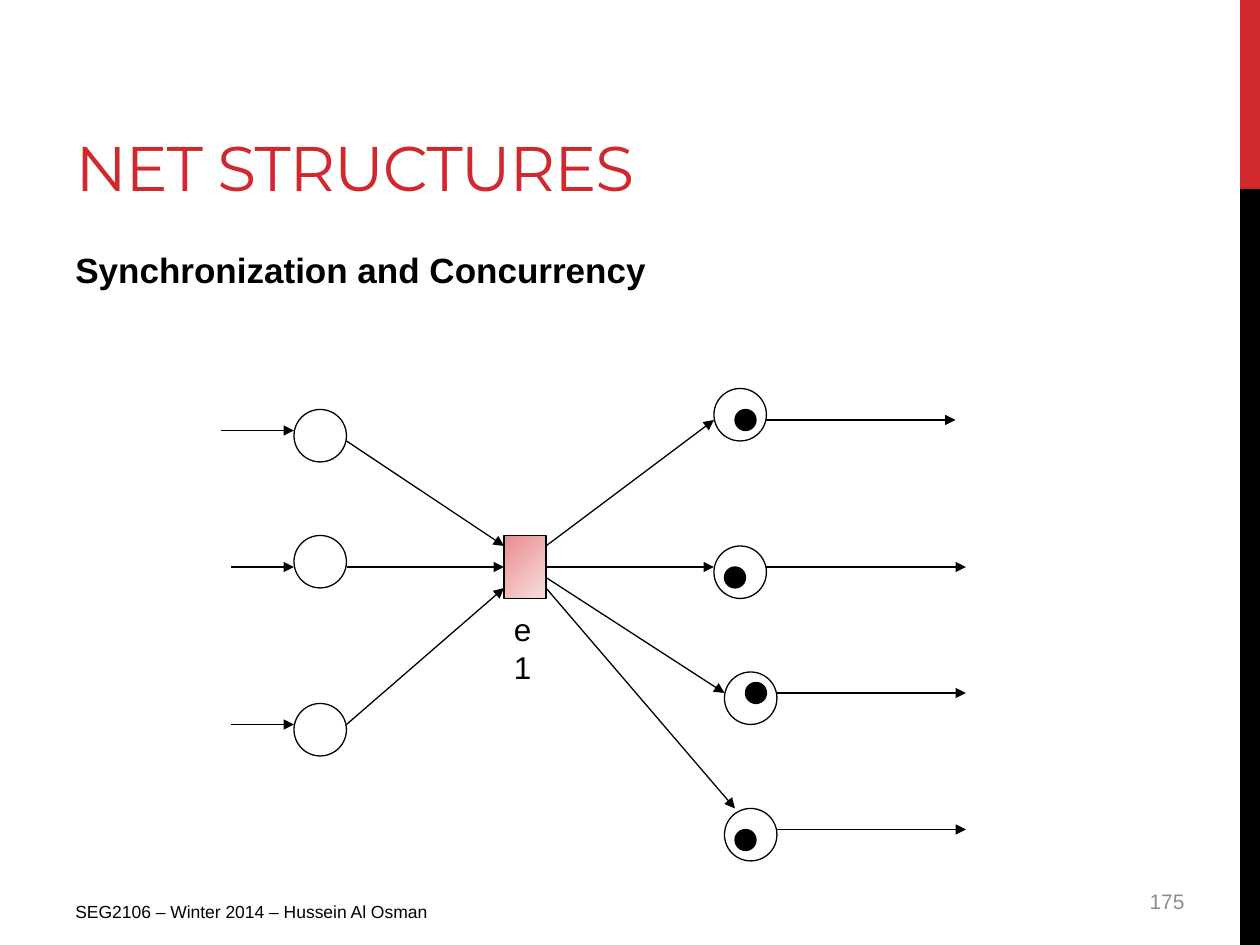
"""Builds a Petri net slide on synchronization and concurrency."""
from lxml import etree
from pptx import Presentation
from pptx.dml.color import RGBColor
from pptx.enum.shapes import MSO_CONNECTOR, MSO_SHAPE
from pptx.enum.text import MSO_ANCHOR, MSO_AUTO_SIZE, PP_ALIGN
from pptx.oxml.ns import qn
from pptx.util import Cm, Pt

RECT, OVAL = MSO_SHAPE.RECTANGLE, MSO_SHAPE.OVAL
STRAIGHT = MSO_CONNECTOR.STRAIGHT
TOP, MIDDLE, BOTTOM = MSO_ANCHOR.TOP, MSO_ANCHOR.MIDDLE, MSO_ANCHOR.BOTTOM
LEFT, RIGHT = PP_ALIGN.LEFT, PP_ALIGN.RIGHT
RED, BLACK = "D1282E", "000000"
LEFT_SITE, RIGHT_SITE = 1, 3

TITLE = "NET STRUCTURES"
TEXTS = [
    ("Synchronization and Concurrency", (1.27, 4.88, 21.16, 1.2), dict(size=20, bold=True)),
    ("e1", (10.11, 12.17, 1.12, 1.9), dict(size=18)),
    ("175", (18.21, 17.65, 5.92, 1.02),
     dict(size=12, color="8C8C8C", align=RIGHT, anchor=MIDDLE)),
    ("SEG2106 – Winter 2014 – Hussein Al Osman", (1.27, 18.03, 9.53, 0.79), dict(size=10)),
]
SIDE_BARS = [(0, 3.81, RED), (3.81, 15.24, BLACK)]

GRID = 2.54 / 12
PLACE_SIZE, TOKEN_SIZE = 5, 2
EVENT = dict(left=48, top=51, width=4, height=6)
INPUT_LEFT = 28
INPUTS = [
    dict(top=39, entry=(21, 41), leave_y=42, event_y=52),
    dict(top=51, entry=(22, 54), leave_y=54, event_y=54),
    dict(top=67, entry=(22, 69), leave_y=69, event_y=56),
]
OUTPUTS = [
    dict(place=(68, 37), token=(70, 39), event_y=52, arrive=(68, 40), leave=(91, 40)),
    dict(place=(68, 52), token=(69, 54), event_y=54, arrive=(68, 54), leave=(92, 54)),
    dict(place=(69, 64), token=(71, 65), event_y=55, arrive=(69, 66), leave=(92, 66)),
    dict(place=(69, 77), token=(70, 79), event_y=56, arrive=(70, 77), leave=(92, 79)),
]


def rgb(color):
    """Return the colour of a hex string."""
    return RGBColor.from_string(color)


def grid(*units):
    """Turn grid units into lengths."""
    return [Cm(unit * GRID) for unit in units]


def write(box, text, size, color=BLACK, font="Arial", bold=False,
          align=LEFT, anchor=TOP, spacing=None):
    """Put one formatted paragraph into a shape."""
    frame = box.text_frame
    frame.word_wrap = True
    frame.auto_size = MSO_AUTO_SIZE.NONE
    frame.vertical_anchor = anchor
    para = frame.paragraphs[0]
    para.alignment = align
    para.space_before = Pt(0)
    span = para.add_run()
    span.text = text
    span.font.size = Pt(size)
    span.font.name = font
    span.font.bold = bold
    span.font.color.rgb = rgb(color)
    if spacing is not None:
        span.font._element.set("spc", str(spacing))


def add_shape(page, kind, bounds, fill=None, line=None):
    """Add a preset shape with an optional fill and outline."""
    shape = page.shapes.add_shape(kind, *bounds)
    shape.shadow.inherit = False
    if fill:
        shape.fill.solid()
        shape.fill.fore_color.rgb = rgb(fill)
    else:
        shape.fill.background()
    if line:
        shape.line.color.rgb = rgb(line)
        shape.line.width = Pt(0.75)
    else:
        shape.line.fill.background()
    return shape


def add_arrow(page, start, end):
    """Add a thin black arrow between two grid points."""
    arrow = page.shapes.add_connector(STRAIGHT, *grid(*start, *end))
    arrow.line.color.rgb = rgb(BLACK)
    arrow.line.width = Pt(0.75)
    etree.SubElement(arrow.line._get_or_add_ln(), qn("a:tailEnd"), type="triangle")
    etree.SubElement(arrow._element.spPr, qn("a:effectLst"))
    return arrow


def add_event(page):
    """Add the shaded event box."""
    event = add_shape(page, RECT, grid(*EVENT.values()), line=BLACK)
    event.fill.gradient()
    event.fill.gradient_angle = 315
    for stop, color in zip(event.fill.gradient_stops, ("EA8C8C", "F7DEDE")):
        stop.color.rgb = rgb(color)
    return event


def add_place(page, left, top):
    """Add an empty place circle."""
    add_shape(page, OVAL, grid(left, top, PLACE_SIZE, PLACE_SIZE), line=BLACK)


def add_net(page):
    """Draw the event with its input and output places."""
    event = add_event(page)
    event_right = EVENT["left"] + EVENT["width"]
    event_middle = EVENT["top"] + EVENT["height"] / 2
    for item in INPUTS:
        add_place(page, INPUT_LEFT, item["top"])
        add_arrow(page, item["entry"], (INPUT_LEFT, item["entry"][1]))
        arrow = add_arrow(page, (INPUT_LEFT + PLACE_SIZE, item["leave_y"]),
                          (EVENT["left"], item["event_y"]))
        if item["event_y"] == event_middle:
            arrow.end_connect(event, LEFT_SITE)
    for item in OUTPUTS:
        add_place(page, *item["place"])
        add_shape(page, OVAL, grid(*item["token"], TOKEN_SIZE, TOKEN_SIZE), BLACK, BLACK)
        arrow = add_arrow(page, (event_right, item["event_y"]), item["arrive"])
        if item["event_y"] == event_middle:
            arrow.begin_connect(event, RIGHT_SITE)
        add_arrow(page, (item["place"][0] + PLACE_SIZE, item["leave"][1]), item["leave"])


def main():
    """Build and save the deck."""
    deck = Presentation()
    deck.slide_width, deck.slide_height = Cm(25.4), Cm(19.05)
    page = deck.slides.add_slide(deck.slide_layouts[5])
    for top, height, color in SIDE_BARS:
        add_shape(page, RECT, (Cm(25), Cm(top), Cm(0.4), Cm(height)), color)
    title = page.shapes.title
    title.left, title.top, title.width, title.height = Cm(1.27), Cm(0.43), Cm(19.25), Cm(3.81)
    write(title, TITLE, size=36, color=RED, font="Montserrat", anchor=BOTTOM, spacing=-60)
    add_net(page)
    for text, bounds, style in TEXTS:
        box = page.shapes.add_textbox(*map(Cm, bounds))
        write(box, text, **style)
    deck.save("out.pptx")


if __name__ == "__main__":
    main()
